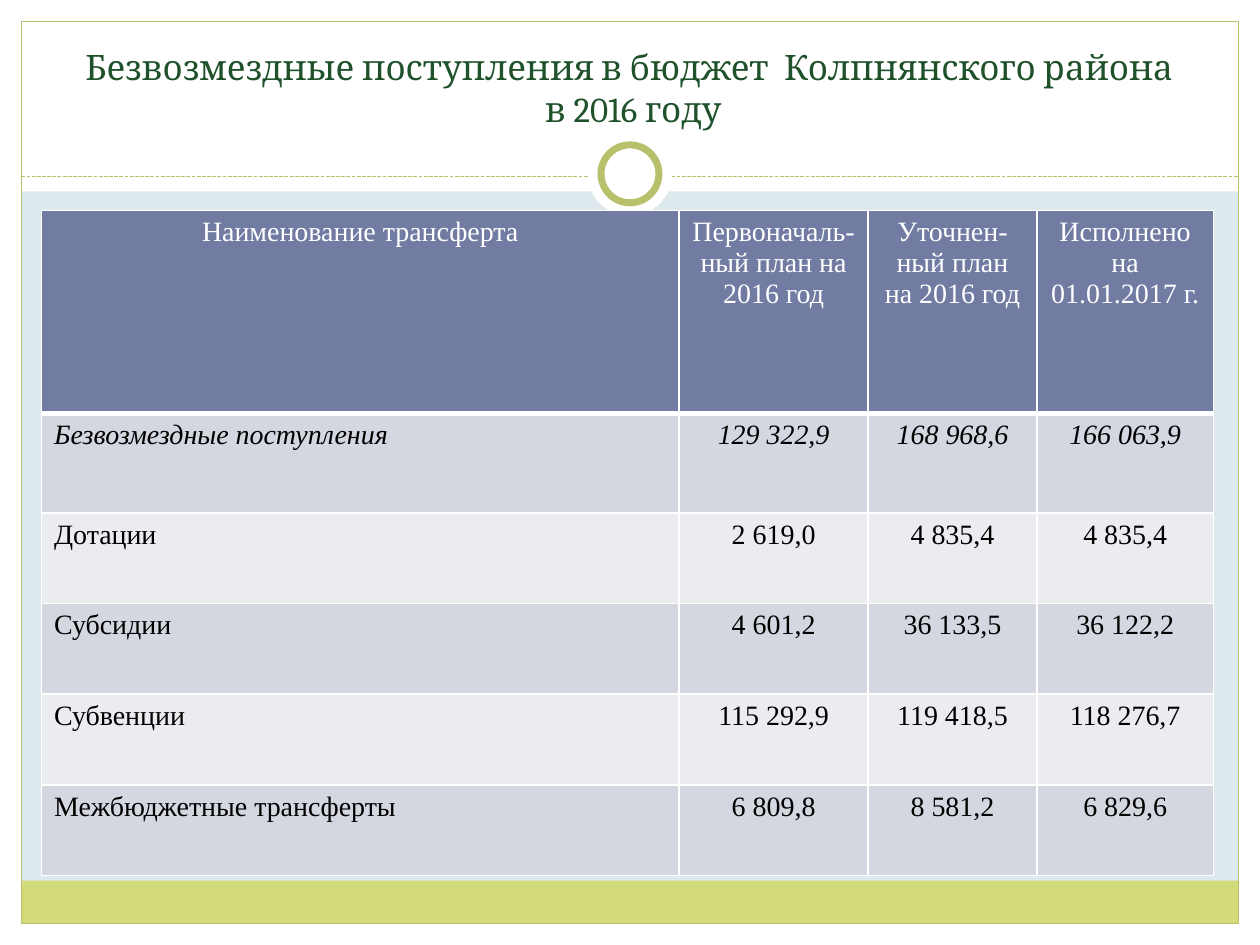
from dataclasses import dataclass

from lxml import etree
from pptx import Presentation
from pptx.dml.color import RGBColor
from pptx.enum.dml import MSO_LINE
from pptx.enum.shapes import MSO_CONNECTOR, MSO_SHAPE
from pptx.enum.text import MSO_ANCHOR, PP_ALIGN
from pptx.oxml.ns import qn
from pptx.util import Inches, Pt

RECT, OVAL = MSO_SHAPE.RECTANGLE, MSO_SHAPE.OVAL
LINE, DASH = MSO_CONNECTOR.STRAIGHT, MSO_LINE.SQUARE_DOT
LEFT, MID = PP_ALIGN.LEFT, PP_ALIGN.CENTER
BOTTOM = MSO_ANCHOR.BOTTOM


@dataclass(frozen=True)
class Theme:
    back: str = "DDE9EC"
    white: str = "FFFFFF"
    black: str = "000000"
    olive: str = "B9C06C"
    lime: str = "D2DA7A"
    green: str = "1F512B"
    head: str = "727CA3"
    bands: tuple = ("D5D7E0", "EBECF0")
    serif: str = "Cambria"
    roman: str = "Times New Roman"
    large: int = 20
    small: int = 16


def color(code):
    return RGBColor.from_string(code)


def write(frame, text, font, size, tint, align=MID, slant=False):
    frame.word_wrap = True
    frame.text = text
    for para in frame.paragraphs:
        para.alignment = align
        for run in para.runs:
            run.font.name = font
            run.font.size = Pt(size)
            run.font.color.rgb = color(tint)
            run.font.bold = False
            run.font.italic = slant


class Page:
    def __init__(self, deck, theme):
        self.theme = theme
        self.slide = deck.slides.add_slide(deck.slide_layouts[5])
        self.shapes = self.slide.shapes
        fill = self.slide.background.fill
        fill.solid()
        fill.fore_color.rgb = color(theme.back)

    def shape(self, kind, box, fill=None, line=None, width=0.75):
        item = self.shapes.add_shape(kind, *map(Inches, box))
        item.shadow.inherit = False
        if fill:
            item.fill.solid()
            item.fill.fore_color.rgb = color(fill)
        else:
            item.fill.background()
        if line:
            item.line.color.rgb = color(line)
            item.line.width = Pt(width)
        else:
            item.line.fill.background()

    def rule(self, left, right, top):
        item = self.shapes.add_connector(LINE, *map(Inches, (left, top, right, top)))
        item.line.color.rgb = color(self.theme.olive)
        item.line.width = Pt(0.75)
        item.line.dash_style = DASH
        etree.SubElement(item._element.spPr, qn("a:effectLst"))

    def title(self, text, box):
        item = self.shapes.title
        item.left, item.top, item.width, item.height = map(Inches, box)
        theme = self.theme
        write(item.text_frame, text, theme.serif, theme.large, theme.green)
        item.text_frame.vertical_anchor = BOTTOM
        self.shapes._spTree.append(item._element)

    def edge(self, cell, side, width):
        line = etree.SubElement(cell._tc.get_or_add_tcPr(), qn("a:ln" + side), w=str(Pt(width)))
        fill = etree.SubElement(line, qn("a:solidFill"))
        etree.SubElement(fill, qn("a:srgbClr"), val=self.theme.white)

    def cell(self, cell, text, row, col):
        theme = self.theme
        thick = {"T": 3 if row == 1 else 1, "B": 3 if row == 0 else 1}
        for side in "LRTB":
            self.edge(cell, side, thick.get(side, 1))
        cell.fill.solid()
        cell.fill.fore_color.rgb = color(theme.bands[(row - 1) % 2] if row else theme.head)
        write(cell.text_frame, text, theme.roman, theme.small,
              theme.black if row else theme.white,
              align=LEFT if row and col == 0 else MID, slant=row == 1)

    def table(self, data, left, top, wide, high):
        box = map(Inches, (left, top, sum(wide), sum(high)))
        grid = self.shapes.add_table(len(high), len(wide), *box).table
        for col, size in zip(grid.columns, wide):
            col.width = Inches(size)
        for row, size in zip(grid.rows, high):
            row.height = Inches(size)
        for r, line in enumerate(data):
            for c, text in enumerate(line):
                self.cell(grid.cell(r, c), text, r, c)


DATA = [
    ("Наименование трансферта", "Первоначаль-ный план на 2016 год",
     "Уточнен-ный план на 2016 год", "Исполнено на 01.01.2017 г."),
    ("Безвозмездные поступления", "129 322,9", "168 968,6", "166 063,9"),
    ("Дотации", "2 619,0", "4 835,4", "4 835,4"),
    ("Субсидии", "4 601,2", "36 133,5", "36 122,2"),
    ("Субвенции", "115 292,9", "119 418,5", "118 276,7"),
    ("Межбюджетные трансферты", "6 809,8", "8 581,2", "6 829,6"),
]


def main():
    deck = Presentation()
    wide, high, rim = 10, 7.5, 0.17
    deck.slide_width, deck.slide_height = Inches(wide), Inches(high)
    theme = Theme()
    page = Page(deck, theme)
    for box in ((0, high - rim, wide, rim), (0, 0, wide, 1.52),
                (0, 0, rim, high), (wide - rim, 0, rim, high)):
        page.shape(RECT, box, fill=theme.white)
    page.shape(RECT, (rim, 6.99, wide - 2 * rim, 0.34), fill=theme.lime)
    page.shape(RECT, (rim, rim, wide - 2 * rim, high - 2 * rim), line=theme.olive)
    page.rule(rim, wide - rim, 1.4)
    for size, line in ((0.67, None), (0.46, theme.olive)):
        box = ((wide - size) / 2, 1.38 - size / 2, size, size)
        page.shape(OVAL, box, fill=theme.white, line=line, width=4)
    page.title("Безвозмездные поступления в бюджет  Колпнянского района\v в 2016 году",
               (0.33, 0.25, 9.33, 0.83))
    page.table(DATA, 0.33, 1.67, (5.06, 1.5, 1.34, 1.4), (1.61, 0.79) + (0.72,) * 4)
    deck.save("out.pptx")


if __name__ == "__main__":
    main()
